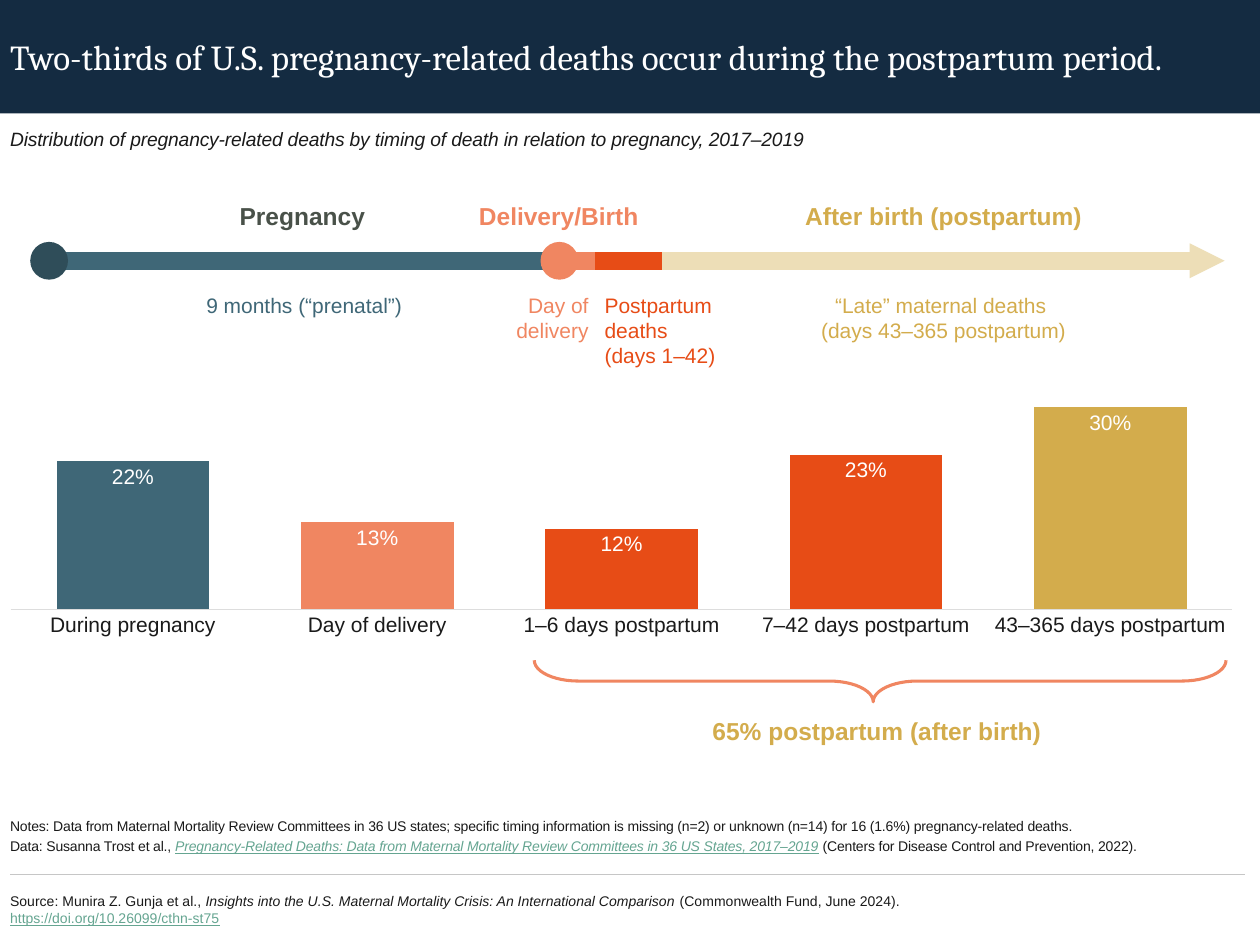
from copy import deepcopy
from dataclasses import dataclass

from lxml import etree
from pptx import Presentation
from pptx import util as u
from pptx.chart.data import CategoryChartData
from pptx.dml.color import RGBColor
from pptx.enum import chart as charts, shapes, text
from pptx.oxml import ns

WIDTH, HEIGHT = u.Inches(10), u.Inches(7.5)
COLUMNS, ROWS = 100, 75
LEFT, RIGHT, CENTER = text.PP_ALIGN.LEFT, text.PP_ALIGN.RIGHT, text.PP_ALIGN.CENTER


@dataclass(frozen=True)
class Theme:
    body: str = "Arial"
    heading: str = "Cambria"
    navy: str = "142B41"
    ink: str = "1A1A1A"
    white: str = "FFFFFF"
    grey: str = "495149"
    rule: str = "C6C6C6"
    axis: str = "DDDDDD"
    link: str = "65A591"
    teal: str = "3F6777"
    deep_teal: str = "2F4D59"
    coral: str = "F08661"
    orange: str = "E74C16"
    gold: str = "D3AC4C"
    sand: str = "EDDEB7"
    title: int = 20
    phase: int = 14
    label: int = 12
    subtitle: int = 11
    chart: int = 10
    note: int = 8


THEME = Theme()
MARGIN, CONTENT = 0.8, 98
AXIS_ROW = 20.7
START, BIRTH, DAY_END, EARLY_END, END = 3.8, 44.3, 47.25, 52.5, 97.2


def col(n):
    return round(WIDTH * n / COLUMNS)


def row(n):
    return round(HEIGHT * n / ROWS)


def area(left, top, width, height):
    return col(left), row(top), col(width), row(height)


def rgb(value):
    return RGBColor.from_string(value)


def set_font(font, size, color, name=THEME.body, **formats):
    values = {"size": u.Pt(size), "name": name, **formats}
    for key, value in values.items():
        setattr(font, key, value)
    font.color.rgb = rgb(color)


def add_words(paragraph, words, spacing, style):
    """Add one run per line, with breaks that share the run's format."""
    for index, line in enumerate(words.split("\n")):
        if index:
            paragraph.add_line_break()
        run = paragraph.add_run()
        run.text = line
        set_font(run.font, **style)
        properties = run.font._element
        if spacing:
            properties.set("spc", str(spacing))
        if index:
            run._r.getprevious().append(deepcopy(properties))


def add_text(slide, box, paragraphs, size, color, align=LEFT, anchor=text.MSO_ANCHOR.TOP,
             inset=True, spacing=0, **formats):
    """Each paragraph is a list of (words, format changes)."""
    frame = slide.shapes.add_textbox(*area(*box)).text_frame
    frame.word_wrap = True
    frame.vertical_anchor = anchor
    if not inset:
        for side in ("left", "top", "right", "bottom"):
            setattr(frame, f"margin_{side}", 0)
    for index, pieces in enumerate(paragraphs):
        paragraph = frame.add_paragraph() if index else frame.paragraphs[0]
        paragraph.alignment = align
        if index:
            paragraph.space_before = u.Pt(0.2 * size)
        for words, changes in pieces:
            style = {"size": size, "color": color, **formats, **changes}
            add_words(paragraph, words, spacing, style)


def add_label(slide, box, words, color, size=THEME.label, align=CENTER, **formats):
    add_text(slide, box, [[(words, {})]], size, color, align, **formats)


def add_line(slide, start, end, level, color, width, arrow=False):
    line = slide.shapes.add_connector(
        shapes.MSO_CONNECTOR.STRAIGHT, col(start), row(level), col(end), row(level))
    line.line.color.rgb = rgb(color)
    line.line.width = u.Pt(width)
    if arrow:
        etree.SubElement(line.line._get_or_add_ln(), ns.qn("a:tailEnd"),
                         type="triangle", w="sm", len="sm")
    etree.SubElement(line._element.spPr, ns.qn("a:effectLst"))


def add_filled(slide, kind, box, color):
    shape = slide.shapes.add_shape(kind, *area(*box))
    shape.shadow.inherit = False
    shape.fill.solid()
    shape.fill.fore_color.rgb = rgb(color)
    shape.line.fill.background()


def add_brace(slide, box, color):
    brace = slide.shapes.add_shape(shapes.MSO_SHAPE.LEFT_BRACE, *area(*box))
    brace.shadow.inherit = False
    brace.rotation = 270
    brace.adjustments[0], brace.adjustments[1] = 1.06, 0.49
    brace.fill.background()
    brace.line.color.rgb = rgb(color)
    brace.line.width = u.Pt(1.75)


def set_plot_area(chart, **shares):
    plot_area = chart._chartSpace.chart.plotArea
    for old in plot_area.findall(ns.qn("c:layout")):
        plot_area.remove(old)
    layout = etree.Element(ns.qn("c:layout"))
    manual = etree.SubElement(layout, ns.qn("c:manualLayout"))
    settings = {"layoutTarget": "inner", "xMode": "edge", "yMode": "edge", **shares}
    for tag, value in settings.items():
        etree.SubElement(manual, ns.qn(f"c:{tag}"), val=str(value))
    plot_area.insert(0, layout)


def add_deaths_chart(slide, box, bars):
    data = CategoryChartData(number_format="0%")
    data.categories = [name for name, _, _ in bars]
    data.add_series("Series 1", [share for _, share, _ in bars])
    chart = slide.shapes.add_chart(
        charts.XL_CHART_TYPE.COLUMN_CLUSTERED, *area(*box), data).chart
    chart.has_legend = chart.has_title = False
    set_font(chart.font, THEME.chart, THEME.ink)
    set_plot_area(chart, x=0, y=0.015, w=0.986, h=0.867)

    timing, shares = chart.category_axis, chart.value_axis
    timing.major_tick_mark = charts.XL_TICK_MARK.NONE
    set_font(timing.tick_labels.font, THEME.label, THEME.ink)
    timing.format.line.color.rgb = rgb(THEME.axis)
    timing.format.line.width = u.Pt(0.75)
    scale = {"minimum_scale": 0, "maximum_scale": 0.5, "major_unit": 0.1,
             "has_major_gridlines": False, "visible": False}
    for key, value in scale.items():
        setattr(shares, key, value)

    plot = chart.plots[0]
    plot.gap_width = 60
    plot.vary_by_categories = False
    deaths = plot.series[0]
    deaths.format.fill.solid()
    deaths.format.fill.fore_color.rgb = rgb(THEME.navy)
    for index, (_, _, color) in enumerate(bars):
        fill = deaths.points[index].format.fill
        fill.solid()
        fill.fore_color.rgb = rgb(color)
    labels = deaths.data_labels
    formats = {"show_value": True, "number_format": "0%", "number_format_is_linked": False,
               "position": charts.XL_LABEL_POSITION.INSIDE_END}
    for key, value in formats.items():
        setattr(labels, key, value)
    set_font(labels.font, THEME.label, THEME.white)


def add_heading(slide):
    middle = {"anchor": text.MSO_ANCHOR.MIDDLE, "inset": False, "align": LEFT}
    add_filled(slide, shapes.MSO_SHAPE.RECTANGLE, (0, 0, COLUMNS, 9), THEME.navy)
    add_label(slide, (MARGIN, 0, CONTENT, 9),
              "Two-thirds of U.S. pregnancy-related deaths occur during the postpartum period.",
              THEME.white, THEME.title, name=THEME.heading, **middle)
    add_label(slide, (MARGIN, 9.7, CONTENT, 2.7),
              "Distribution of pregnancy-related deaths by timing of death "
              "in relation to pregnancy, 2017–2019",
              THEME.ink, THEME.subtitle, italic=True, spacing=-10, **middle)


def add_timeline(slide):
    for left, width, phase, color in (
            (3.7, 40.6, "Pregnancy", THEME.grey),
            (35.7, 17.3, "Delivery/Birth", THEME.coral),
            (52.6, 44.6, "After birth (postpartum)", THEME.gold)):
        add_label(slide, (left, 15.5, width, 3.4), phase, color, THEME.phase, bold=True)
    for left, width, height, period, color, align in (
            (3.9, 40.5, 3, "9 months (“prenatal”)", THEME.teal, CENTER),
            (39.2, 8.5, 5, "Day of delivery", THEME.coral, RIGHT),
            (52.6, 44.6, 5, "“Late” maternal deaths \n(days 43–365 postpartum)",
             THEME.gold, CENTER),
            (47, 17.8, 7.1, "Postpartum \ndeaths \n(days 1–42)", THEME.orange, LEFT)):
        add_label(slide, (left, 22.7, width, height), period, color, align=align)
    add_line(slide, START, END, AXIS_ROW, THEME.sand, 10, arrow=True)
    for start, end, color in ((BIRTH, DAY_END, THEME.coral), (START, BIRTH, THEME.teal),
                              (DAY_END, EARLY_END, THEME.orange)):
        add_line(slide, start, end, AXIS_ROW, color, 10)
    for center, color in ((START, THEME.deep_teal), (BIRTH, THEME.coral)):
        add_filled(slide, shapes.MSO_SHAPE.OVAL, (center - 1.4, AXIS_ROW - 1.5, 3, 3), color)


def add_footer(slide):
    link = {"color": THEME.link, "underline": True}
    add_text(slide, (MARGIN, 62.8, CONTENT, 5), [
        [("Notes: Data from Maternal Mortality Review Committees in 36 US states; specific timing "
          "information is missing (n=2) or unknown (n=14) for 16 (1.6%) pregnancy-related deaths.",
          {})],
        [("Data: Susanna Trost et al., ", {}),
         ("Pregnancy-Related Deaths: Data from Maternal Mortality Review Committees "
          "in 36 US States, 2017–2019", {**link, "italic": True}),
         (" (Centers for Disease Control and Prevention, 2022).", {})],
    ], THEME.note, THEME.ink, anchor=text.MSO_ANCHOR.BOTTOM, inset=False, spacing=-10)
    add_line(slide, MARGIN, MARGIN + CONTENT, 69.4, THEME.rule, 0.75)
    add_text(slide, (MARGIN, 69.9, 72.5, 4.6), [[
        ("Source: Munira Z. Gunja et al., ", {}),
        ("Insights into the U.S. Maternal Mortality Crisis: An International Comparison",
         {"italic": True}),
        (" (Commonwealth Fund, June 2024). ", {}),
        ("https://doi.org/10.26099/cthn-st75", link),
    ]], THEME.note, THEME.ink, anchor=text.MSO_ANCHOR.MIDDLE, inset=False)


def main():
    deck = Presentation()
    deck.slide_width, deck.slide_height = WIDTH, HEIGHT
    slide = deck.slides.add_slide(deck.slide_layouts[6])
    add_heading(slide)
    add_deaths_chart(slide, (MARGIN, 21.2, 98.4, 30.8), [
        ("During pregnancy", 0.22, THEME.teal),
        ("Day of delivery", 0.13, THEME.coral),
        ("1–6 days postpartum", 0.12, THEME.orange),
        ("7–42 days postpartum", 0.23, THEME.orange),
        ("43–365 days postpartum", 0.3, THEME.gold)])
    add_timeline(slide)
    add_brace(slide, (68.2, 26.6, 3.3, 54.9), THEME.coral)
    add_label(slide, (54.9, 56.3, 29.4, 3.4), "65% postpartum (after birth)",
              THEME.gold, THEME.phase, bold=True)
    add_footer(slide)
    deck.save("out.pptx")


if __name__ == "__main__":
    main()
